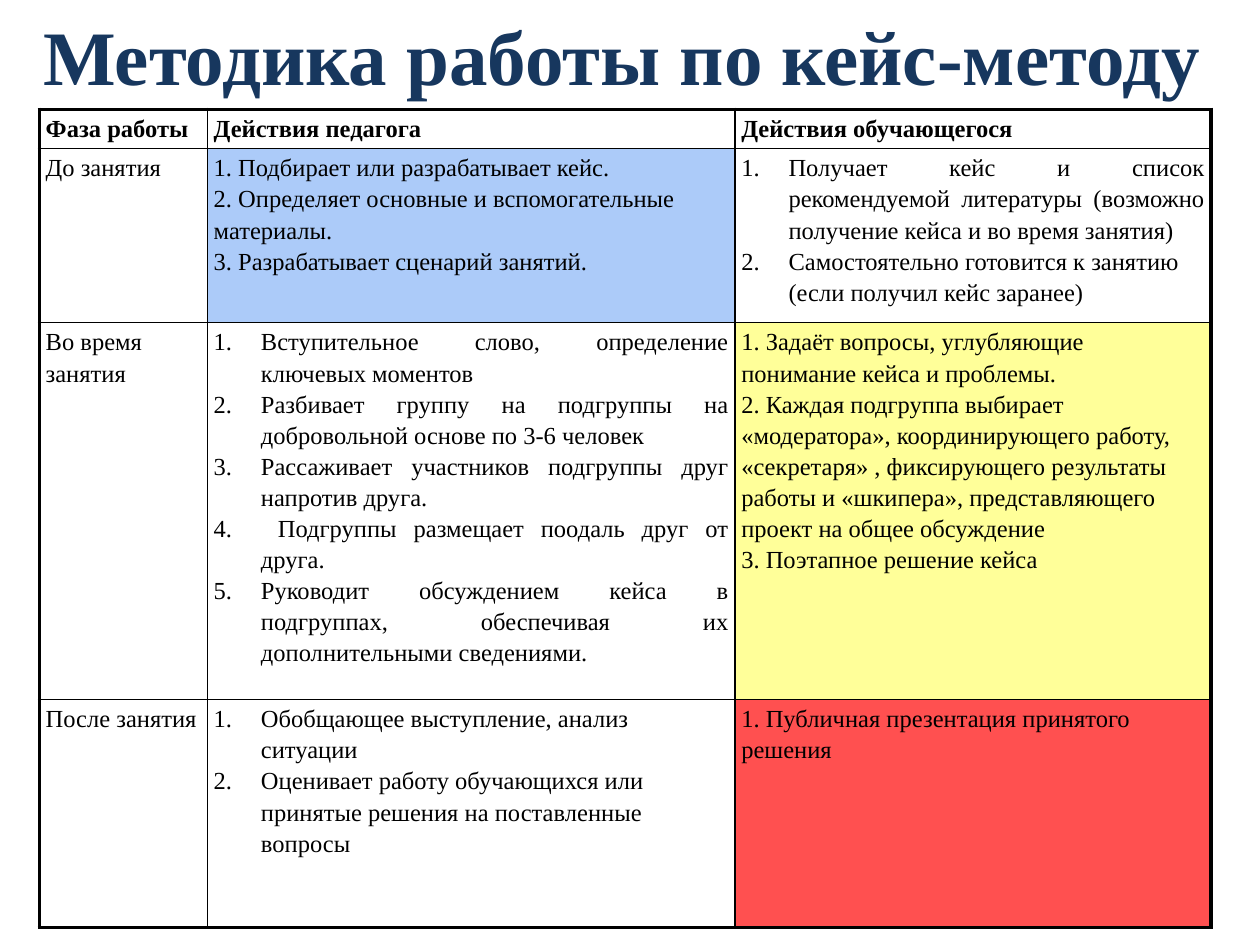
"""Build a slide with a table of the phases of the case method."""
import dataclasses
import typing

import lxml.etree
import pptx
import pptx.dml.color
import pptx.enum.text
import pptx.oxml.ns
import pptx.util

Pt = pptx.util.Pt
Align = pptx.enum.text.PP_ALIGN
Anchor = pptx.enum.text.MSO_ANCHOR


@dataclasses.dataclass(frozen=True)
class Theme:
    """Hold the colours, type sizes and line widths."""
    face: str = "Times New Roman"
    navy: str = "17375E"
    black: str = "000000"
    blue: str = "ACCBF9"
    yellow: str = "FFFF99"
    red: str = "FF5050"
    head: float = 44
    body: float = 14
    thick: float = 2.25
    thin: float = 1


@dataclasses.dataclass(frozen=True)
class Entry:
    """Hold the text and look of one table cell."""
    lines: tuple[str, ...]
    fill: typing.Optional[str] = None
    listed: bool = False
    spread: int = 0
    bold: bool = False


THEME = Theme()
INDENT = 27
WIDTHS = (96, 301.5, 272)
HEIGHTS = (22, 96, 206.5, 130.5)
ROWS = (
    tuple(Entry((name,), bold=True)
          for name in ("Фаза работы", "Действия педагога", "Действия обучающегося")),
    (
        Entry(("До занятия",)),
        Entry((
            "1. Подбирает или разрабатывает кейс.",
            "2. Определяет основные и вспомогательные",
            "материалы.",
            "3. Разрабатывает сценарий занятий.",
        ), fill=THEME.blue),
        Entry((
            "Получает кейс и список рекомендуемой литературы (возможно получение кейса и во время занятия)",
            "Самостоятельно готовится к занятию (если получил кейс заранее)",
        ), listed=True, spread=1),
    ),
    (
        Entry(("Во время занятия",)),
        Entry((
            "Вступительное слово, определение ключевых моментов",
            "Разбивает группу на подгруппы на добровольной основе по 3-6 человек",
            "Рассаживает участников подгруппы друг напротив друга.",
            " Подгруппы размещает поодаль друг от друга.",
            "Руководит обсуждением кейса в подгруппах, обеспечивая их дополнительными сведениями.",
        ), listed=True, spread=5),
        Entry((
            "1. Задаёт вопросы, углубляющие понимание кейса и проблемы.",
            "2. Каждая подгруппа выбирает «модератора», координирующего работу, «секретаря» , "
            "фиксирующего результаты работы и «шкипера», представляющего проект на общее обсуждение",
            "3. Поэтапное решение кейса",
        ), fill=THEME.yellow),
    ),
    (
        Entry(("После занятия",)),
        Entry((
            "Обобщающее выступление, анализ ситуации",
            "Оценивает работу обучающихся или принятые решения на поставленные вопросы",
        ), listed=True),
        Entry(("1. Публичная презентация принятого решения",), fill=THEME.red),
    ),
)


def format_all(item: typing.Any, values: dict[str, typing.Any]) -> None:
    """Set each named value on the item."""
    for name, value in values.items():
        setattr(item, name, value)


def add_node(parent: typing.Any, tag: str, **values: str) -> typing.Any:
    """Add a child node with the given values."""
    return lxml.etree.SubElement(parent, pptx.oxml.ns.qn(tag), values)


def write_run(para: typing.Any, text: str, size: float, tint: str, bold: bool) -> None:
    """Write one run of styled text."""
    run = para.add_run()
    run.text = text
    format_all(run.font, {"name": THEME.face, "size": Pt(size), "bold": bold})
    run.font.color.rgb = pptx.dml.color.RGBColor.from_string(tint)


def draw_edges(cell: typing.Any, row: int, col: int) -> None:
    """Draw thick lines round the table and thin lines inside."""
    outer = {
        "a:lnL": col == 0,
        "a:lnR": col == len(WIDTHS) - 1,
        "a:lnT": row == 0,
        "a:lnB": row == len(HEIGHTS) - 1,
    }
    props = cell._tc.get_or_add_tcPr()
    for tag, edge in outer.items():
        width = Pt(THEME.thick if edge else THEME.thin)
        line = add_node(props, tag, w=str(int(width)))
        add_node(add_node(line, "a:solidFill"), "a:srgbClr", val=THEME.black)


def fill_cell(cell: typing.Any, entry: Entry) -> None:
    """Fill a cell with its colour and text."""
    format_all(cell, {
        "margin_left": Pt(3.6), "margin_right": Pt(3.6),
        "margin_top": Pt(1.5), "margin_bottom": Pt(1.5),
        "vertical_anchor": Anchor.TOP,
    })
    if entry.fill:
        cell.fill.solid()
        cell.fill.fore_color.rgb = pptx.dml.color.RGBColor.from_string(entry.fill)
    else:
        cell.fill.background()
    frame = cell.text_frame
    for index, text in enumerate(entry.lines):
        para = frame.add_paragraph() if index else frame.paragraphs[0]
        format_all(para, {
            "line_spacing": 1.15,
            "alignment": Align.JUSTIFY if index < entry.spread else Align.LEFT,
        })
        if entry.listed:
            props = para._p.get_or_add_pPr()
            props.set("marL", str(int(Pt(INDENT))))
            props.set("indent", str(int(Pt(-INDENT))))
            add_node(props, "a:buAutoNum", type="arabicPeriod")
        write_run(para, text, THEME.body, THEME.black, entry.bold)


def draw_title(slide: typing.Any) -> None:
    """Draw the slide title."""
    box = slide.shapes.add_textbox(Pt(16.5), Pt(0), Pt(678), Pt(62.5))
    format_all(box.text_frame, {"word_wrap": True, "vertical_anchor": Anchor.MIDDLE})
    para = box.text_frame.paragraphs[0]
    para.alignment = Align.CENTER
    write_run(para, "Методика работы по кейс-методу", THEME.head, THEME.navy, True)


def draw_table(slide: typing.Any) -> None:
    """Draw the table of phases."""
    table = slide.shapes.add_table(
        len(HEIGHTS), len(WIDTHS), Pt(22.5), Pt(62.5),
        Pt(sum(WIDTHS)), Pt(sum(HEIGHTS))).table
    format_all(table, {"first_row": False, "horz_banding": False})
    for column, width in zip(table.columns, WIDTHS):
        column.width = Pt(width)
    for row, (height, entries) in enumerate(zip(HEIGHTS, ROWS)):
        table.rows[row].height = Pt(height)
        for col, entry in enumerate(entries):
            cell = table.cell(row, col)
            draw_edges(cell, row, col)
            fill_cell(cell, entry)


def main() -> None:
    """Build and save the slide."""
    deck = pptx.Presentation()
    format_all(deck, {"slide_width": Pt(720), "slide_height": Pt(540)})
    slide = deck.slides.add_slide(deck.slide_layouts[6])
    draw_title(slide)
    draw_table(slide)
    deck.save("out.pptx")


if __name__ == "__main__":
    main()
